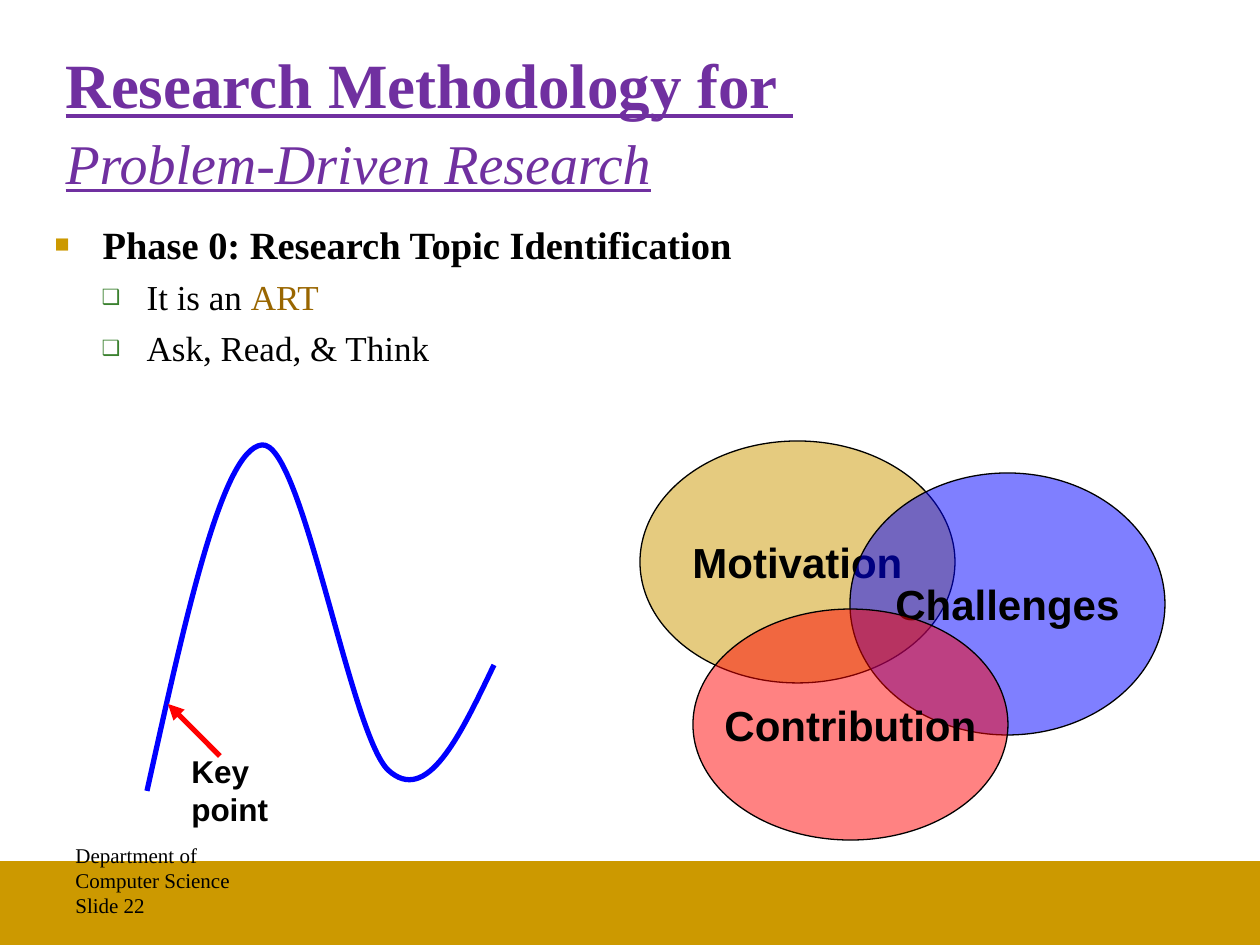
"""Build the slide on topic identification in problem-driven research."""
from lxml.etree import SubElement
from pptx import Presentation
from pptx.dml.color import RGBColor
from pptx.enum.shapes import MSO_CONNECTOR as LINK, MSO_SHAPE as KIND
from pptx.enum.text import MSO_ANCHOR as ANCHOR, MSO_AUTO_SIZE as FIT, PP_ALIGN as ALIGN
from pptx.oxml.ns import qn
from pptx.util import Emu, Pt

HUE = {"gold": "CC9900", "violet": "7030A0", "black": "000000", "brown": "996600",
       "green": "3B812F", "blue": "0000FF", "red": "FF0000"}
SERIF, SANS = "Times New Roman", "Arial"

TITLE = [[("Research Methodology for ", {"bold": True}), ("\n", {}),
          ("Problem-Driven Research", {"size": 32, "italic": True})]]
BODY = [[("Phase 0: Research Topic Identification", {"size": 22, "bold": True})],
        [("It is an ", {}), ("ART", {"color": "brown"})],
        [("Ask, Read, & Think", {})]]
FOOT = [[("Department of Computer Science", {}), ("\n", {}), ("Slide 22", {})]]
MARKS = [("■", "gold", 65, 48, 48)] + [("❑", "green", 60, 92, 45)] * 2
VENN = [("Motivation", "gold", 50, (640, 441, 315, 242)),
        ("Challenges", "blue", 50, (850, 473, 315, 262)),
        ("Contribution", "red", 49, (693, 609, 315, 231))]
CURVE = [(147, 791), (185, 620), (222, 449), (262, 445), (302, 441),
         (350, 733), (388, 770), (427, 806), (460, 736), (494, 665)]


def px(n):
    return Emu(round(n * 914400 / 126))


def box(nums):
    return [px(n) for n in nums]


def rgb(name):
    return RGBColor.from_string(HUE[name])


def write(shape, paras, size=20, color="black", font=SERIF, align=ALIGN.LEFT,
          anchor=ANCHOR.TOP, wrap=True, line=None, gap=0, **look):
    frame = shape.text_frame
    frame.auto_size, frame.word_wrap, frame.vertical_anchor = FIT.NONE, wrap, anchor
    for i, runs in enumerate(paras):
        para = frame.add_paragraph() if i else frame.paragraphs[0]
        para.alignment, para.line_spacing = align, line
        para.space_before = Pt(gap if i else 0)
        for text, own in runs:
            form = {"size": size, "color": color, **look, **own}
            if text == "\n":
                para.add_line_break()
                SubElement(para._p[-1], qn("a:rPr"), sz=str(form["size"] * 100))
                continue
            run = para.add_run()
            run.text = text
            run.font.name, run.font.size = font, Pt(form["size"])
            run.font.color.rgb = rgb(form["color"])
            run.font.bold = form.get("bold", False)
            run.font.italic = form.get("italic", False)
            run.font.underline = form.get("under", False)


def mark(para, char, color, scale, left, hang):
    props = para._p.get_or_add_pPr()
    props.set("marL", str(px(left)))
    props.set("indent", str(-px(hang)))
    SubElement(SubElement(props, qn("a:buClr")), qn("a:srgbClr"), val=HUE[color])
    SubElement(props, qn("a:buSzPct"), val=str(scale * 1000))
    SubElement(props, qn("a:buChar"), char=char)


def paint(shape, color, alpha=100, edge=None):
    shape.shadow.inherit = False
    shape.fill.solid()
    shape.fill.fore_color.rgb = rgb(color)
    if alpha < 100:
        tint = shape.fill._xPr.find(".//" + qn("a:srgbClr"))
        SubElement(tint, qn("a:alpha"), val=str(alpha * 1000))
    if edge:
        stroke(shape, edge, 0.75)
    else:
        shape.line.fill.background()


def stroke(shape, color, width):
    shape.line.color.rgb = rgb(color)
    shape.line.width = Pt(width)


def place(shape, nums):
    shape.left, shape.top, shape.width, shape.height = box(nums)


def draw_curve(shapes):
    pen = shapes.build_freeform(*CURVE[0], scale=914400 / 126)
    pen.add_line_segments(CURVE[1:], close=False)
    curve = pen.convert_to_shape()
    curve.shadow.inherit = False
    curve.fill.background()
    stroke(curve, "blue", 3)
    track = curve._element.find(".//" + qn("a:path"))
    steps = track.findall(qn("a:lnTo"))
    for i in range(0, len(steps), 3):
        bend = SubElement(track, qn("a:cubicBezTo"))
        for step in steps[i:i + 3]:
            bend.append(step[0])
            track.remove(step)


def draw_arrow(shapes):
    arrow = shapes.add_connector(LINK.STRAIGHT, *box((220, 756, 168, 704)))
    stroke(arrow, "red", 3)
    SubElement(arrow.line._get_or_add_ln(), qn("a:tailEnd"), type="triangle")
    SubElement(arrow._element.spPr, qn("a:effectLst"))


def main():
    deck = Presentation()
    deck.slide_width, deck.slide_height = px(1260), px(945)
    slide = deck.slides.add_slide(deck.slide_layouts[1])
    shapes = slide.shapes

    paint(shapes.add_shape(KIND.RECTANGLE, *box((0, 861, 1260, 84))), "gold")
    foot = shapes.add_textbox(*box((63, 861, 221, 63)))
    write(foot, FOOT, size=12, anchor=ANCHOR.BOTTOM)

    title, body = shapes.title, slide.placeholders[1]
    place(title, (53, 32, 1103, 148))
    write(title, TITLE, size=36, color="violet", under=True, line=1.1)
    place(body, (42, 210, 1192, 252))
    write(body, BODY, line=1.1, gap=2.7)
    for i, (para, spec) in enumerate(zip(body.text_frame.paragraphs, MARKS)):
        para.level = min(i, 1)
        mark(para, *spec)

    venn = shapes.add_group_shape().shapes
    for name, color, alpha, spot in VENN:
        oval = venn.add_shape(KIND.OVAL, *box(spot))
        paint(oval, color, alpha, edge="black")
        write(oval, [[(name, {})]], size=24, font=SANS, bold=True,
              align=ALIGN.CENTER, anchor=ANCHOR.MIDDLE, wrap=False)

    plot = shapes.add_group_shape().shapes
    draw_curve(plot)
    draw_arrow(plot)
    note = plot.add_textbox(*box((179, 746, 126, 88)))
    write(note, [[("Key point", {})]], size=18, font=SANS, bold=True)
    deck.save("out.pptx")


if __name__ == "__main__":
    main()
